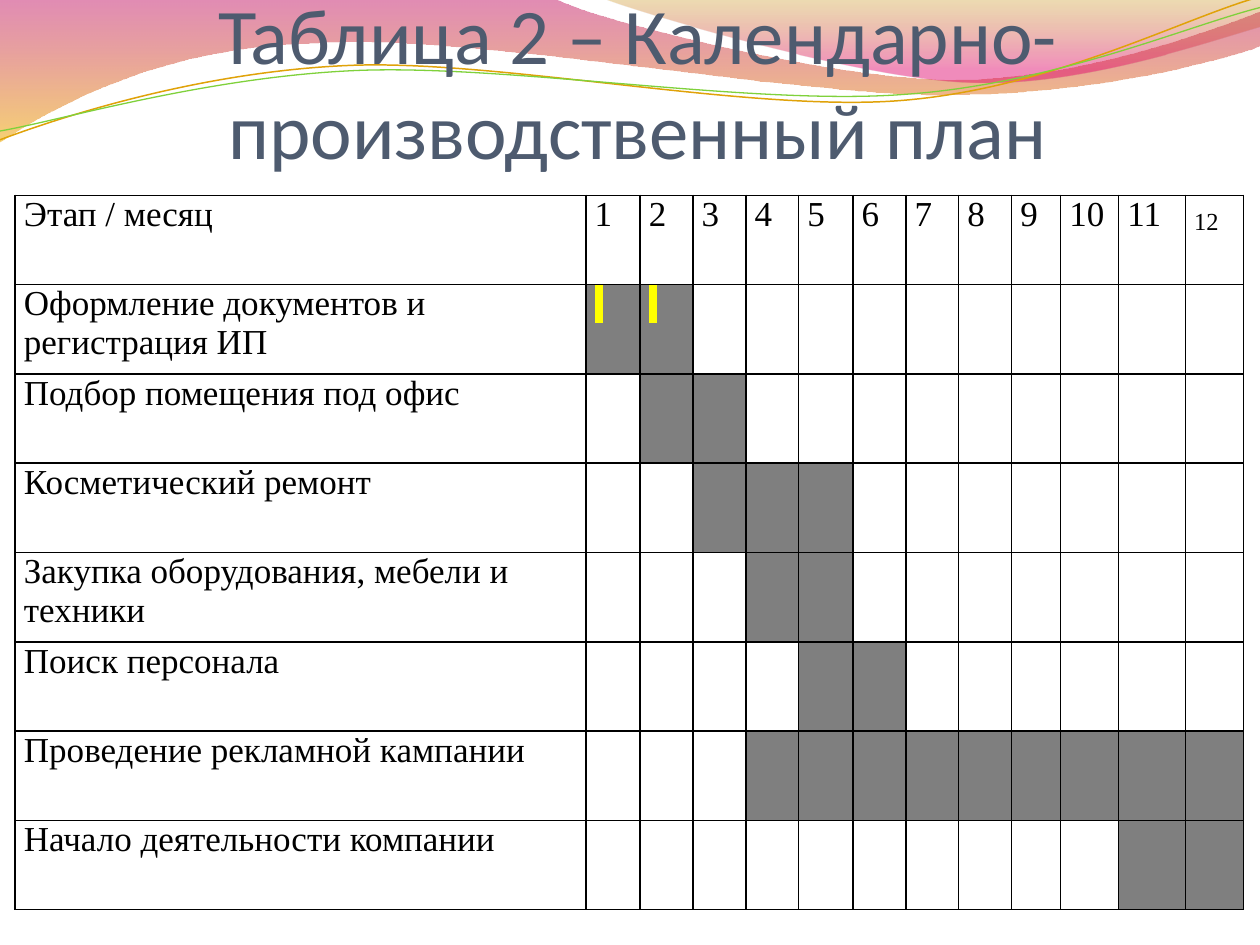
from dataclasses import dataclass

from lxml import etree
from pptx import Presentation
from pptx.dml.color import RGBColor
from pptx.enum.text import MSO_ANCHOR, PP_ALIGN
from pptx.oxml import parse_xml
from pptx.oxml.ns import nsdecls, qn
from pptx.util import Inches, Pt

BOTTOM, CENTER = MSO_ANCHOR.BOTTOM, PP_ALIGN.CENTER
TITLE_ONLY = 5


@dataclass(frozen=True)
class Theme:
    title_font: str = "Calibri"
    table_font: str = "Times New Roman"
    title_size: int = 45
    table_size: int = 20
    small_size: int = 14
    title: str = "4E5B6F"
    text: str = "000000"
    border: str = "000000"
    busy: str = "7F7F7F"
    highlight: str = "FFFF00"
    gold_line: str = "E0A209"
    green_line: str = "7FD13B"
    # Gradient stops: position %, colour, opacity %
    pink_to_gold: tuple = ((0, "BD0059", 45), (100, "F0AB00", 55))
    gold_to_pink: tuple = ((0, "C38B00", 30), (80, "E1006B", 45))


THEME = Theme()

# Wave outlines: a two-number step is a straight line, a six-number step a curve
LEFT_WAVE = [(0, 0), (4.4, -0.01), (4.76, 0.17, 6.64, 0.63, 7.58, 0.63),
             (8.53, 0.63, 9.58, 0.26, 10, 0.09), (10.01, 0.36),
             (9.83, 0.44, 8.7, 0.76, 7.46, 0.75),
             (6.22, 0.75, 3.82, 0.28, 2.57, 0.34),
             (1.29, 0.36, 0.46, 0.83, -0.01, 1.13)]
RIGHT_WAVE = [(4.79, -0.01), (5.09, 0.11, 6.82, 0.62, 7.69, 0.65),
              (8.56, 0.69, 9.61, 0.32, 10, 0.21), (10, 0)]
GOLD_CURVE = [(0, 1.11), (0.48, 0.93, 1.58, 0.57, 2.77, 0.52),
              (3.95, 0.47, 5.93, 0.89, 7.13, 0.8),
              (8.33, 0.71, 9.38, 0.15, 9.98, -0.02)]
GREEN_CURVE = [(0, 1.04), (0.47, 0.96, 1.64, 0.61, 2.83, 0.56),
               (4.03, 0.51, 5.97, 0.84, 7.17, 0.75),
               (8.36, 0.67, 9.41, 0.21, 10, 0.06)]

TITLE = "Таблица 2 – Календарно-производственный план"
STAGE_HEADING = "Этап / месяц"
# Stage, first busy month, last busy month
STAGES = [("Оформление документов и регистрация ИП", 1, 2),
          ("Подбор помещения под офис", 2, 3),
          ("Косметический ремонт", 3, 5),
          ("Закупка оборудования, мебели и техники", 4, 5),
          ("Поиск персонала", 5, 6),
          ("Проведение рекламной кампании", 4, 12),
          ("Начало деятельности компании", 11, 12)]
STAGE_WIDTH = 4.53
MONTH_WIDTHS = [0.43, 0.42, 0.42, 0.42] * 2 + [0.39, 0.46, 0.53, 0.46]


def set_all(target, values):
    for name, value in values.items():
        setattr(target, name, value)


def format_font(font, face, size, color):
    set_all(font, {"name": face, "size": Pt(size), "bold": False})
    font.color.rgb = RGBColor.from_string(color)


def add_outline(slide, left, top, steps, close):
    """Draw all step points as lines, then join each curve's three points."""
    points = [(Inches(left + x), Inches(top + y))
              for step in steps for x, y in zip(step[::2], step[1::2])]
    builder = slide.shapes.build_freeform(*points[0], scale=1.0)
    builder.add_line_segments(points[1:], close=close)
    outline = builder.convert_to_shape()
    outline.shadow.inherit = False
    segments = iter(list(outline._element.spPr.iter(qn("a:lnTo"))))
    for step in steps[1:]:
        segment = next(segments)
        if len(step) == 6:
            segment.tag = qn("a:cubicBezTo")
            for _ in range(2):
                control = next(segments)
                segment.append(control[0])
                control.getparent().remove(control)
    return outline


def add_waves(slide, left, top):
    for steps, stops in ((LEFT_WAVE, THEME.pink_to_gold), (RIGHT_WAVE, THEME.gold_to_pink)):
        wave = add_outline(slide, left, top, steps, True)
        wave.line.fill.background()
        wave.fill.background()
        stop_xml = "".join(
            f'<a:gs pos="{pos * 1000}"><a:srgbClr val="{color}">'
            f'<a:alpha val="{opacity * 1000}"/></a:srgbClr></a:gs>'
            for pos, color, opacity in stops)
        gradient = parse_xml(f'<a:gradFill {nsdecls("a")}><a:gsLst>{stop_xml}</a:gsLst>'
                             '<a:lin ang="5400000" scaled="0"/></a:gradFill>')
        properties = wave._element.spPr
        properties.replace(properties.find(qn("a:noFill")), gradient)

    for steps, color, width in ((GOLD_CURVE, THEME.gold_line, 0.85),
                                (GREEN_CURVE, THEME.green_line, 0.75)):
        curve = add_outline(slide, left, top, steps, False)
        curve.fill.background()
        curve.line.width = Pt(width)
        curve.line.color.rgb = RGBColor.from_string(color)


def place_title(slide, left, top, width, height):
    title = slide.shapes.title
    set_all(title, {"left": Inches(left), "top": Inches(top),
                    "width": Inches(width), "height": Inches(height)})
    frame = title.text_frame
    frame.text = TITLE
    set_all(frame, {"vertical_anchor": BOTTOM, "word_wrap": True, "margin_left": 0,
                    "margin_right": 0, "margin_top": Inches(0.05), "margin_bottom": 0})
    paragraph = frame.paragraphs[0]
    paragraph.alignment = CENTER
    format_font(paragraph.runs[0].font, THEME.title_font, THEME.title_size, THEME.title)
    # Later in the drawing order than the waves
    slide.shapes._spTree.append(title._element)


def add_borders(cell):
    properties = cell._tc.get_or_add_tcPr()
    for index, side in enumerate(("lnL", "lnR", "lnT", "lnB")):
        properties.insert(index, parse_xml(
            f'<a:{side} {nsdecls("a")} w="12700"><a:solidFill>'
            f'<a:srgbClr val="{THEME.border}"/></a:solidFill></a:{side}>'))


def write_cell(cell, text, size=THEME.table_size):
    run = cell.text_frame.paragraphs[0].add_run()
    run.text = text
    format_font(run.font, THEME.table_font, size, THEME.text)
    return run


def highlight_run(run):
    mark = etree.Element(qn("a:highlight"))
    etree.SubElement(mark, qn("a:srgbClr")).set("val", THEME.highlight)
    run.font._element.find(qn("a:latin")).addprevious(mark)


def add_schedule(slide, left, top, width, height):
    widths = [STAGE_WIDTH] + MONTH_WIDTHS
    row_count = len(STAGES) + 1
    schedule = slide.shapes.add_table(row_count, len(widths), Inches(left), Inches(top),
                                      Inches(width), Inches(height)).table
    set_all(schedule, {"first_row": False, "horz_banding": False})
    for column, column_width in zip(schedule.columns, widths):
        column.width = Inches(column_width)
    for row in schedule.rows:
        row.height = Inches(height / row_count)
    for cell in schedule.iter_cells():
        set_all(cell, {"margin_left": Inches(0.07), "margin_right": Inches(0.07),
                       "margin_top": 0, "margin_bottom": 0})
        cell.fill.background()
        add_borders(cell)

    # Heading row; the last month is set smaller and lower
    write_cell(schedule.cell(0, 0), STAGE_HEADING)
    last_month = len(MONTH_WIDTHS)
    for month in range(1, last_month + 1):
        size = THEME.small_size if month == last_month else THEME.table_size
        write_cell(schedule.cell(0, month), str(month), size)
    schedule.cell(0, last_month).text_frame.paragraphs[0].line_spacing = 1.5

    # Stage rows with busy months shaded; the first stage is also highlighted
    for row, (stage, first, last) in enumerate(STAGES, start=1):
        write_cell(schedule.cell(row, 0), stage)
        for month in range(first, last + 1):
            busy = schedule.cell(row, month)
            busy.fill.solid()
            busy.fill.fore_color.rgb = RGBColor.from_string(THEME.busy)
            if row == 1:
                highlight_run(write_cell(busy, " "))


def main():
    deck = Presentation()
    set_all(deck, {"slide_width": Inches(10), "slide_height": Inches(7.5)})
    slide = deck.slides.add_slide(deck.slide_layouts[TITLE_ONLY])
    add_waves(slide, 0, 0)
    place_title(slide, 0.12, 0, 9.88, 1.39)
    add_schedule(slide, 0.12, 1.55, 9.76, 5.67)
    deck.save("out.pptx")


if __name__ == "__main__":
    main()
